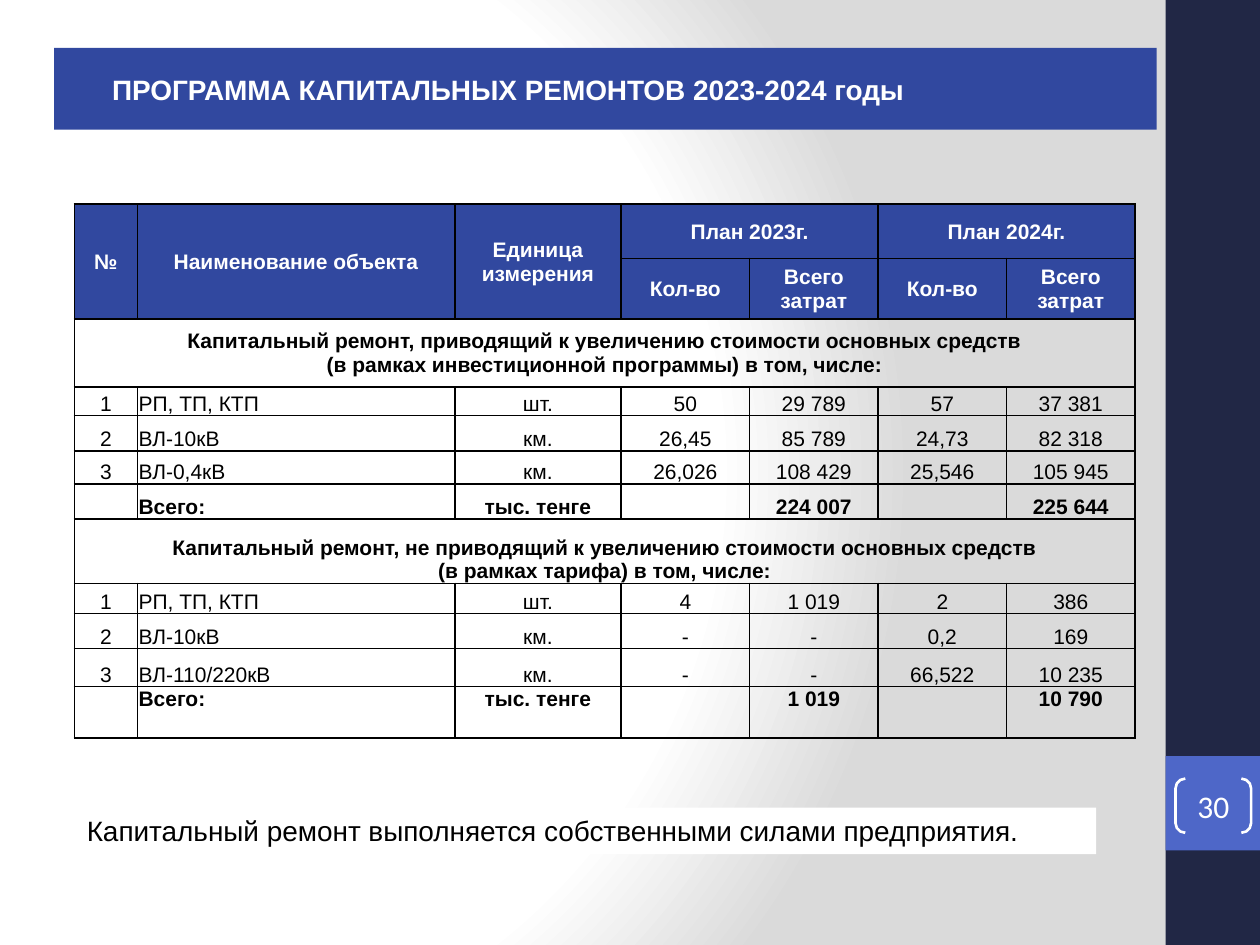
from lxml.etree import SubElement
from pptx import Presentation
from pptx.dml.color import RGBColor
from pptx.enum.shapes import MSO_SHAPE as Shape
from pptx.enum.text import MSO_ANCHOR as Anchor, MSO_AUTO_SIZE as AutoSize, PP_ALIGN as Align
from pptx.oxml.ns import qn
from pptx.util import Inches, Pt

BLUE, NAVY, ACCENT = "31489F", "212745", "4E67C8"
WHITE, BLACK, GREY = "FFFFFF", "000000", "DADADA"

COLUMN_WIDTHS = [0.5, 2.52, 1.32] + [1.02] * 4
ROW_HEIGHTS = [0.43, 0.48, 0.54, 0.23, 0.28, 0.26, 0.28, 0.51, 0.24, 0.28, 0.3, 0.41]
HEADER_ROWS = 2
SECTION_ROWS = (2, 7)
TOTAL_ROWS = (6, 11)
# First row, first column, last row, last column of each header merge
HEADER_MERGES = [(0, 0, 1, 0), (0, 1, 1, 1), (0, 2, 1, 2), (0, 3, 0, 4), (0, 5, 0, 6)]

REPAIRS = [
    ["№", "Наименование объекта", "Единица измерения", "План 2023г.", "", "План 2024г.", ""],
    ["", "", ""] + ["Кол-во", "Всего затрат"] * 2,
    ["Капитальный ремонт, приводящий к увеличению стоимости основных средств\n"
     "(в рамках инвестиционной программы) в том, числе:"],
    ["1", "РП, ТП, КТП", "шт.", "50", "29 789", "57", "37 381"],
    ["2", "ВЛ-10кВ", "км.", "26,45", "85 789", "24,73", "82 318"],
    ["3", "ВЛ-0,4кВ", "км.", "26,026", "108 429", "25,546", "105 945"],
    ["", "Всего:", "тыс. тенге", "", "224 007", "", "225 644"],
    ["Капитальный ремонт, не приводящий к увеличению стоимости основных средств\n"
     "(в рамках тарифа) в том, числе:"],
    ["1", "РП, ТП, КТП", "шт.", "4", "1 019", "2", "386"],
    ["2", "ВЛ-10кВ", "км.", "-", "-", "0,2", "169"],
    ["3", "ВЛ-110/220кВ", "км.", "-", "-", "66,522", "10 235"],
    ["", "Всего:", "тыс. тенге", "", "1 019", "", "10 790"],
]


def rgb(value):
    return RGBColor.from_string(value)


def style_text(frame, size, color, bold=False, align=Align.LEFT, font="Arial"):
    for paragraph in frame.paragraphs:
        paragraph.alignment = align
        paragraph.font.name = font
        paragraph.font.size = Pt(size)
        paragraph.font.bold = bold
        paragraph.font.color.rgb = rgb(color)


def set_margins(holder, left, top, right, bottom):
    holder.margin_left, holder.margin_top = Inches(left), Inches(top)
    holder.margin_right, holder.margin_bottom = Inches(right), Inches(bottom)


def add_panel(slide, left, top, width, height, fill=None, kind=Shape.RECTANGLE):
    panel = slide.shapes.add_shape(
        kind, Inches(left), Inches(top), Inches(width), Inches(height))
    panel.shadow.inherit = False
    panel.line.fill.background()
    if fill:
        panel.fill.solid()
        panel.fill.fore_color.rgb = rgb(fill)
    else:
        panel.fill.background()
    return panel


def set_background(slide):
    fill = slide.background.fill
    fill.gradient()
    gradient = slide.background._cSld.find(".//" + qn("a:gradFill"))
    for child in list(gradient):
        gradient.remove(child)
    stops = SubElement(gradient, qn("a:gsLst"))
    for position, color in ((0, WHITE), (75, WHITE), (100, GREY)):
        stop = SubElement(stops, qn("a:gs"), pos=str(position * 1000))
        SubElement(stop, qn("a:srgbClr"), val=color)
    circle = SubElement(gradient, qn("a:path"), {"path": "circle"})
    SubElement(circle, qn("a:fillToRect"), l="20000", t="50000", r="100000", b="50000")


def add_side_strip(slide):
    add_panel(slide, 9.25, 0, 0.75, 7.5, NAVY)
    add_panel(slide, 9.25, 6, 0.75, 0.75, ACCENT)
    page = add_panel(slide, 9.33, 6.18, 0.6, 0.43, kind=Shape.DOUBLE_BRACKET)
    page.adjustments[0] = 0.18
    page.line.color.rgb = rgb(WHITE)
    page.line.width = Pt(1.5)
    frame = page.text_frame
    frame.text = "30"
    frame.vertical_anchor = Anchor.MIDDLE
    set_margins(frame, 0, 0, 0, 0)
    style_text(frame, 18, WHITE, align=Align.CENTER, font="Calibri")


def format_title(slide, text):
    title = slide.shapes.title
    title.left, title.top = Inches(0.43), Inches(0.38)
    title.width, title.height = Inches(8.75), Inches(0.65)
    # Snipped corners for the placeholder
    outline = SubElement(title._element.spPr, qn("a:prstGeom"), prst="snip2DiagRect")
    SubElement(outline, qn("a:avLst"))
    title.fill.solid()
    title.fill.fore_color.rgb = rgb(BLUE)
    frame = title.text_frame
    frame.text = text
    frame.auto_size = AutoSize.NONE
    frame.vertical_anchor = Anchor.MIDDLE
    set_margins(frame, 0.46, 0.04, 0.07, 0.04)
    style_text(frame, 16, WHITE, bold=True)


def add_borders(cell):
    properties = cell._tc.get_or_add_tcPr()
    for side in ("lnL", "lnR", "lnT", "lnB"):
        border = SubElement(properties, qn("a:" + side), w=str(Pt(1)))
        fill = SubElement(border, qn("a:solidFill"))
        SubElement(fill, qn("a:srgbClr"), val=BLACK)


def format_cell(cell, text, row, column):
    header, section = row < HEADER_ROWS, row in SECTION_ROWS
    add_borders(cell)
    if header:
        cell.fill.solid()
        cell.fill.fore_color.rgb = rgb(BLUE)
    else:
        cell.fill.background()
    set_margins(cell, 0.01, 0.01, 0.01, 0)
    if header or row == SECTION_ROWS[0]:
        cell.vertical_anchor = Anchor.MIDDLE
    elif row == TOTAL_ROWS[-1]:
        cell.vertical_anchor = Anchor.TOP
    else:
        cell.vertical_anchor = Anchor.BOTTOM
    cell.text_frame.text = text
    is_name = column == 1 and not header
    style_text(cell.text_frame, 12, WHITE if header else BLACK,
               bold=header or section or row in TOTAL_ROWS,
               align=Align.LEFT if is_name else Align.CENTER)


def add_repairs_table(slide):
    rows, columns = len(ROW_HEIGHTS), len(COLUMN_WIDTHS)
    table = slide.shapes.add_table(
        rows, columns, Inches(0.59), Inches(1.62),
        Inches(sum(COLUMN_WIDTHS)), Inches(sum(ROW_HEIGHTS))).table
    table.first_row = table.horz_banding = False
    for column, width in zip(table.columns, COLUMN_WIDTHS):
        column.width = Inches(width)
    for row, height in zip(table.rows, ROW_HEIGHTS):
        row.height = Inches(height)
    for r, texts in enumerate(REPAIRS):
        for c in range(columns):
            format_cell(table.cell(r, c), texts[c] if c < len(texts) else "", r, c)
    section_merges = [(r, 0, r, columns - 1) for r in SECTION_ROWS]
    for top, left, bottom, right in HEADER_MERGES + section_merges:
        table.cell(top, left).merge(table.cell(bottom, right))


def add_note(slide, text):
    frame = add_panel(slide, 0.59, 6.41, 8.11, 0.37, WHITE).text_frame
    frame.text = text
    frame.word_wrap = True
    frame.auto_size = AutoSize.SHAPE_TO_FIT_TEXT
    frame.vertical_anchor = Anchor.TOP
    style_text(frame, 16, BLACK)


def main():
    deck = Presentation()
    deck.slide_width, deck.slide_height = Inches(10), Inches(7.5)
    slide = deck.slides.add_slide(deck.slide_layouts[5])
    set_background(slide)
    add_side_strip(slide)
    format_title(slide, "ПРОГРАММА КАПИТАЛЬНЫХ РЕМОНТОВ 2023-2024 годы")
    add_note(slide, "Капитальный ремонт выполняется собственными силами предприятия.")
    add_repairs_table(slide)
    deck.save("out.pptx")


if __name__ == "__main__":
    main()
